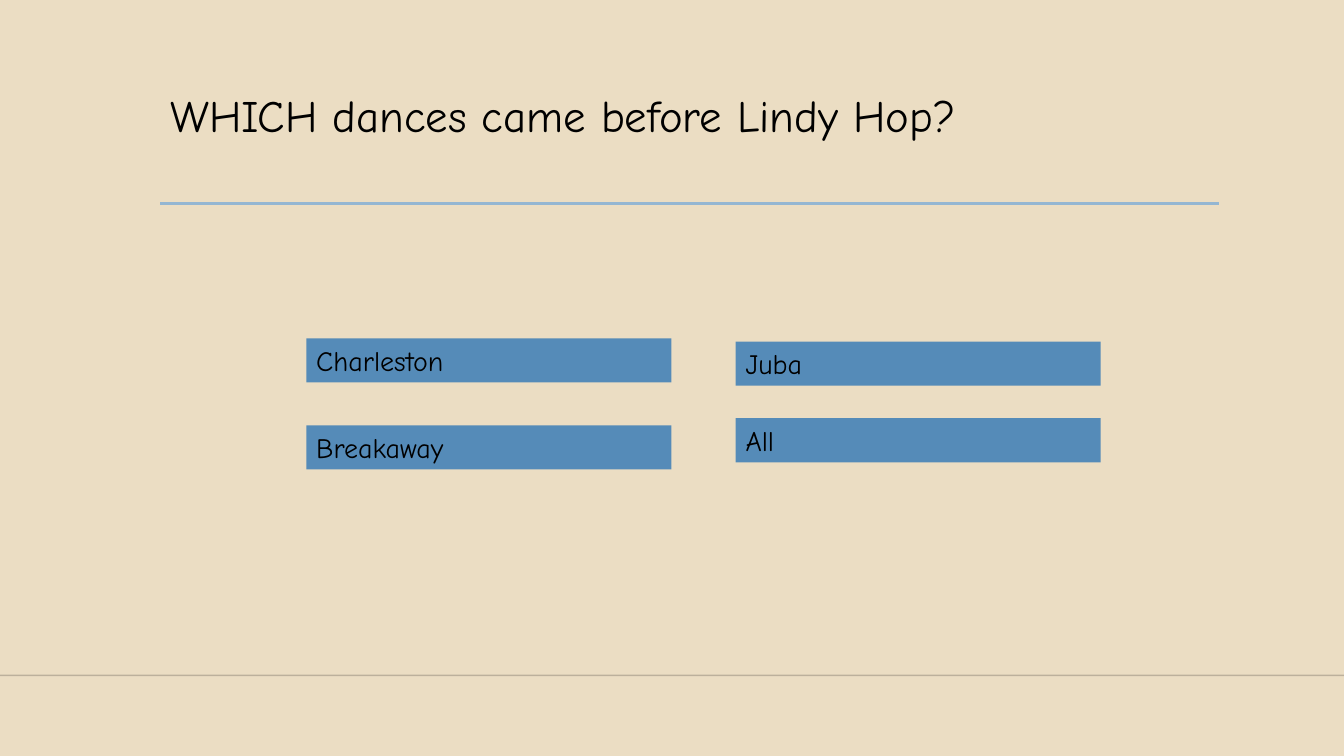
from dataclasses import dataclass

from lxml.etree import SubElement
from pptx import Presentation
from pptx.dml.color import RGBColor
from pptx.enum.shapes import MSO_CONNECTOR as Connector, MSO_SHAPE as Shape
from pptx.enum.text import MSO_ANCHOR as Anchor, MSO_AUTO_SIZE as AutoSize, PP_ALIGN as Align
from pptx.oxml.ns import qn
from pptx.util import Cm, Pt

SLIDE_WIDTH, SLIDE_HEIGHT = 33.87, 19.05


@dataclass(frozen=True)
class Theme:
    font: str = "Comic Neue"
    background: str = "EBDDC3"
    text: str = "000000"
    answer: str = "558BB8"
    title_rule: str = "94B6D2"
    floor: str = "000001"
    title_size: int = 32
    answer_size: int = 20


class QuizSlide:
    def __init__(self, presentation, theme):
        self.theme = theme
        self.slide = presentation.slides.add_slide(presentation.slide_layouts[6])
        background = self.slide.background.fill
        background.solid()
        background.fore_color.rgb = RGBColor.from_string(theme.background)

    def add_text(self, shape, text, size, line_spacing=1.0):
        frame = shape.text_frame
        frame.word_wrap = True
        frame.vertical_anchor = Anchor.TOP
        paragraph = frame.paragraphs[0]
        paragraph.alignment = Align.LEFT
        paragraph.line_spacing = line_spacing
        run = paragraph.add_run()
        run.text = text
        run.font.name = self.theme.font
        run.font.size = Pt(size)
        run.font.color.rgb = RGBColor.from_string(self.theme.text)

    def title(self, text, left, top, width, height):
        box = self.slide.shapes.add_textbox(Cm(left), Cm(top), Cm(width), Cm(height))
        self.add_text(box, text, self.theme.title_size, line_spacing=0.9)

    def answer(self, text, left, top, width, height):
        bar = self.slide.shapes.add_shape(
            Shape.RECTANGLE, Cm(left), Cm(top), Cm(width), Cm(height))
        bar.shadow.inherit = False
        bar.fill.solid()
        bar.fill.fore_color.rgb = RGBColor.from_string(self.theme.answer)
        bar.line.fill.background()
        self.add_text(bar, text, self.theme.answer_size)
        bar.text_frame.auto_size = AutoSize.SHAPE_TO_FIT_TEXT

    def rule(self, left, right, y, color, weight, opacity=100):
        """Draw a horizontal line; opacity is a percentage."""
        line = self.slide.shapes.add_connector(
            Connector.STRAIGHT, Cm(left), Cm(y), Cm(right), Cm(y))
        line.line.color.rgb = RGBColor.from_string(color)
        line.line.width = Pt(weight)
        properties = line._element.spPr
        SubElement(properties, qn("a:effectLst"))
        if opacity < 100:
            fill_color = properties.find(".//" + qn("a:srgbClr"))
            SubElement(fill_color, qn("a:alpha"), val=str(opacity * 1000))


def main():
    presentation = Presentation()
    presentation.slide_width = Cm(SLIDE_WIDTH)
    presentation.slide_height = Cm(SLIDE_HEIGHT)

    theme = Theme()
    quiz = QuizSlide(presentation, theme)
    quiz.rule(0, SLIDE_WIDTH, 17.02, theme.floor, 1, opacity=20)
    quiz.rule(4.04, 30.73, 5.13, theme.title_rule, 2.5)
    quiz.title("WHICH dances came before Lindy Hop?", 4.04, 2.24, 26.67, 2.92)

    answers = [
        ("Charleston", 7.72, 8.53),
        ("Breakaway", 7.72, 10.72),
        ("Juba", 18.54, 8.61),
        ("All", 18.54, 10.54),
    ]
    for text, left, top in answers:
        quiz.answer(text, left, top, width=9.2, height=1.11)

    presentation.save("out.pptx")


if __name__ == "__main__":
    main()
